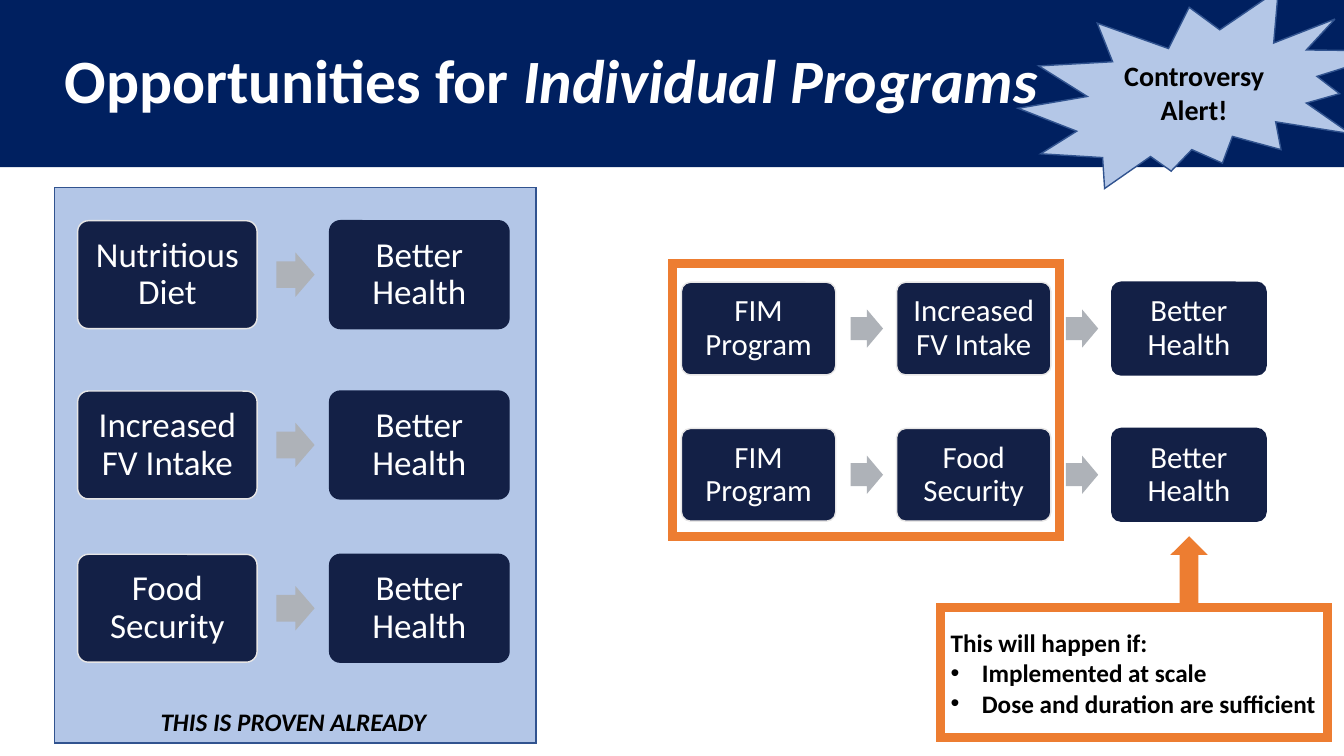
from dataclasses import dataclass

from lxml.etree import SubElement
from pptx import Presentation
from pptx.dml.color import RGBColor
from pptx.enum.shapes import MSO_SHAPE
from pptx.enum.text import MSO_ANCHOR, MSO_AUTO_SIZE, PP_ALIGN
from pptx.oxml.ns import qn
from pptx.util import Inches, Pt

SLIDE_WIDTH, SLIDE_HEIGHT = Inches(13.33), Inches(7.5)
COLUMN, ROW = SLIDE_WIDTH / 100, SLIDE_HEIGHT / 100


@dataclass(frozen=True)
class Theme:
    font: str = "Calibri"
    banner: str = "002060"
    node: str = "132046"
    node_edge: str = "E7E6E6"
    arrow: str = "AEB2B8"
    panel: str = "B3C6E7"
    burst: str = "B4C7E7"
    edge: str = "31538F"
    accent: str = "ED7D31"
    light: str = "FFFFFF"
    dark: str = "000000"
    title_size: int = 44
    burst_size: int = 20
    note_size: int = 18
    thin: float = 1
    thick: float = 6.5


@dataclass(frozen=True)
class Area:
    """A place on the 100 by 100 slide grid, in columns and rows."""
    left: float
    top: float
    width: float
    height: float

    def lengths(self) -> tuple[int, int, int, int]:
        return (round(self.left * COLUMN), round(self.top * ROW),
                round(self.width * COLUMN), round(self.height * ROW))


@dataclass(frozen=True)
class FlowStyle:
    left: float
    pitch: float
    box_width: float
    box_height: float
    arrow_offset: float
    arrow_width: float
    arrow_height: float
    text_size: int
    margin: float


@dataclass(frozen=True)
class Flow:
    style: FlowStyle
    top: float
    steps: tuple[str, ...]


THEME = Theme()
PROVEN = FlowStyle(5.78, 18.75, 13.35, 14.27, 14.78, 2.85, 5.87, 25, 0.1)
PROGRAM = FlowStyle(50.7, 16.01, 11.48, 12.27, 12.6, 2.4, 5.07, 22, 0.09)
FLOWS = (
    Flow(PROVEN, 29.2, ("Nutritious Diet", "Better Health")),
    Flow(PROVEN, 51.73, ("Increased FV Intake", "Better Health")),
    Flow(PROVEN, 73.33, ("Food Security", "Better Health")),
    Flow(PROGRAM, 37.33, ("FIM Program", "Increased FV Intake", "Better Health")),
    Flow(PROGRAM, 56.67, ("FIM Program", "Food Security", "Better Health")),
)
CONDITIONS = ("Implemented at scale", "Dose and duration are sufficient")


def place(shape, area: Area) -> None:
    shape.left, shape.top, shape.width, shape.height = area.lengths()


def outline(shape, color: str, width: float) -> None:
    shape.line.color.rgb = RGBColor.from_string(color)
    shape.line.width = Pt(width)
    SubElement(shape.line._ln, qn("a:miter"), lim="800000")


def add_figure(shapes, kind: MSO_SHAPE, area: Area, fill: str = "",
               line: str = "", width: float = THEME.thin):
    """Add a preset shape; an empty fill or line colour means none."""
    figure = shapes.add_shape(kind, *area.lengths())
    figure.shadow.inherit = False
    if fill:
        figure.fill.solid()
        figure.fill.fore_color.rgb = RGBColor.from_string(fill)
    else:
        figure.fill.background()
    if line:
        outline(figure, line, width)
    else:
        figure.line.fill.background()
    return figure


def set_frame(shape, anchor: MSO_ANCHOR, across: float = 0.1, down: float = 0.05):
    frame = shape.text_frame
    frame.word_wrap = True
    frame.auto_size = MSO_AUTO_SIZE.NONE
    frame.vertical_anchor = anchor
    frame.margin_left = frame.margin_right = Inches(across)
    frame.margin_top = frame.margin_bottom = Inches(down)
    return frame


def add_span(para, text: str, size: int, color: str,
             bold: bool = False, italic: bool = False) -> None:
    span = para.add_run()
    span.text = text
    span.font.name = THEME.font
    span.font.size = Pt(size)
    span.font.bold = bold
    span.font.italic = italic
    span.font.color.rgb = RGBColor.from_string(color)


def set_bullet(para, bulleted: bool) -> None:
    properties = para._p.get_or_add_pPr()
    indent = Inches(0.31) if bulleted else 0
    properties.set("marL", str(indent))
    properties.set("indent", str(-indent))
    if bulleted:
        color = SubElement(properties, qn("a:buClr"))
        SubElement(color, qn("a:srgbClr"), val=THEME.dark)
        SubElement(properties, qn("a:buFont"), typeface="Arial")
        SubElement(properties, qn("a:buChar"), char="•")
    else:
        SubElement(properties, qn("a:buNone"))


def draw_flow(slide, flow: Flow) -> None:
    style = flow.style
    shapes = slide.shapes.add_group_shape().shapes
    arrow_top = flow.top + (style.box_height - style.arrow_height) / 2
    last = len(flow.steps) - 1
    for index, step in enumerate(flow.steps):
        left = style.left + index * style.pitch
        box = add_figure(shapes, MSO_SHAPE.ROUNDED_RECTANGLE,
                         Area(left, flow.top, style.box_width, style.box_height),
                         THEME.node, THEME.node if index == last else THEME.node_edge)
        box.adjustments[0] = 0.1
        para = set_frame(box, MSO_ANCHOR.MIDDLE, style.margin, style.margin).paragraphs[0]
        para.alignment = PP_ALIGN.CENTER
        para.line_spacing = 0.9
        add_span(para, step, style.text_size, THEME.light)
        if index < last:
            arrow = add_figure(shapes, MSO_SHAPE.RIGHT_ARROW,
                               Area(left + style.arrow_offset, arrow_top,
                                    style.arrow_width, style.arrow_height), THEME.arrow)
            arrow.adjustments[0] = 0.6


def draw_header(slide) -> None:
    title = slide.shapes.title
    banner = add_figure(slide.shapes, MSO_SHAPE.RECTANGLE,
                        Area(0, 0, 100, 22.13), THEME.banner)
    title.element.addprevious(banner.element)
    place(title, Area(4.05, 1.33, 86.25, 19.33))
    para = set_frame(title, MSO_ANCHOR.MIDDLE).paragraphs[0]
    para.alignment = PP_ALIGN.LEFT
    para.line_spacing = 0.9
    add_span(para, "Opportunities for ", THEME.title_size, THEME.light, bold=True)
    add_span(para, "Individual Programs", THEME.title_size, THEME.light, True, True)
    burst = add_figure(slide.shapes, MSO_SHAPE.EXPLOSION2,
                       Area(75.75, -1.33, 28.28, 26.27), THEME.burst, THEME.edge)
    para = set_frame(burst, MSO_ANCHOR.MIDDLE).paragraphs[0]
    para.alignment = PP_ALIGN.CENTER
    add_span(para, "Controversy Alert!", THEME.burst_size, THEME.dark, bold=True)


def draw_caption(slide) -> None:
    caption = slide.shapes.add_textbox(*Area(5.78, 92.8, 32.1, 5.33).lengths())
    para = set_frame(caption, MSO_ANCHOR.TOP).paragraphs[0]
    para.alignment = PP_ALIGN.CENTER
    add_span(para, "THIS IS PROVEN ALREADY", THEME.note_size, THEME.dark, True, True)


def draw_conditions(slide) -> None:
    body = slide.placeholders[1]
    place(body, Area(69.98, 80.4, 28.8, 17.2))
    outline(body, THEME.accent, THEME.thick)
    frame = set_frame(body, MSO_ANCHOR.MIDDLE)
    for index, text in enumerate(("This will happen if:", *CONDITIONS)):
        para = frame.add_paragraph() if index else frame.paragraphs[0]
        para.alignment = PP_ALIGN.LEFT
        para.space_before = Pt(0)
        set_bullet(para, index > 0)
        add_span(para, text, THEME.note_size, THEME.dark, bold=True)


def main() -> None:
    deck = Presentation()
    deck.slide_width, deck.slide_height = SLIDE_WIDTH, SLIDE_HEIGHT
    page = deck.slides.add_slide(deck.slide_layouts[1])
    add_figure(page.shapes, MSO_SHAPE.RECTANGLE, Area(4.05, 24.8, 35.85, 73.47),
               THEME.panel, THEME.edge)
    draw_header(page)
    for flow in FLOWS:
        draw_flow(page, flow)
    draw_caption(page)
    add_figure(page.shapes, MSO_SHAPE.RECTANGLE, Area(50.03, 34.8, 28.8, 36.13),
               line=THEME.accent, width=THEME.thick)
    draw_conditions(page)
    add_figure(page.shapes, MSO_SHAPE.UP_ARROW, Area(87.08, 70.93, 2.78, 10), THEME.accent)
    deck.save("out.pptx")


if __name__ == "__main__":
    main()
